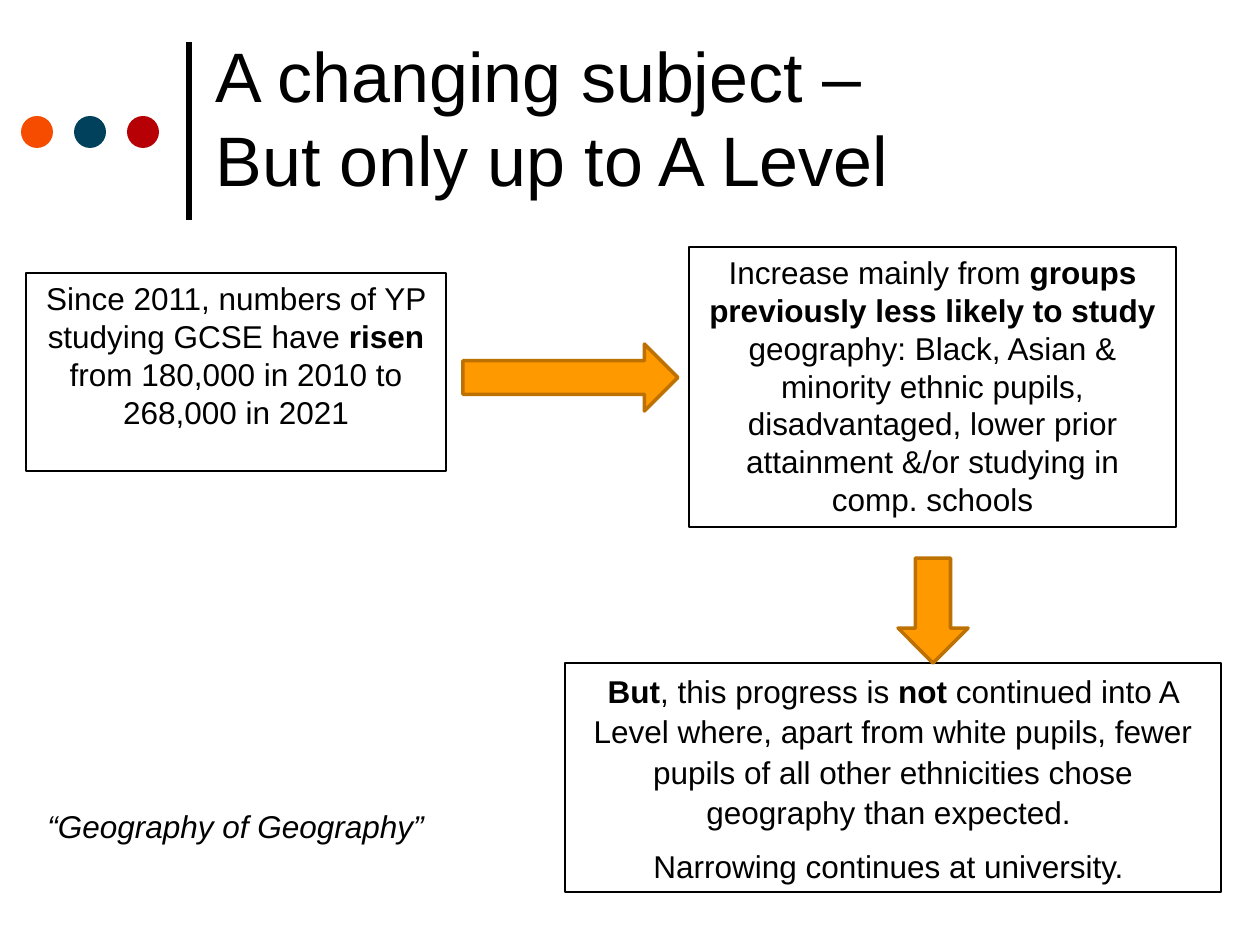
"""Build the slide on how geography is changing as a school subject."""
from typing import NamedTuple

from lxml.etree import SubElement
from pptx import Presentation
from pptx.dml.color import RGBColor
from pptx.enum.shapes import MSO_CONNECTOR, MSO_SHAPE as Shape
from pptx.enum.text import MSO_ANCHOR, PP_ALIGN as Align
from pptx.oxml.ns import qn
from pptx.util import Pt

EMU_PER_PX = 914400 / 126
FONT = "Arial"
BLACK = "000000"


class Box(NamedTuple):
    """A text box; ** in a paragraph switches bold on and off."""
    x: int
    y: int
    w: int
    h: int
    paragraphs: tuple[str, ...]
    spacing: float = 1.0
    after: int = 0
    framed: bool = True


class Mark(NamedTuple):
    """A filled preset shape, outlined when a line colour is given."""
    kind: Shape
    x: int
    y: int
    w: int
    h: int
    fill: str
    line: str = ""


DOTS = [Mark(Shape.OVAL, 21 + 53 * i, 116, 32, 32, fill)
        for i, fill in enumerate(("F54C00", "01415B", "B70005"))]
ARROWS = [
    Mark(Shape.RIGHT_ARROW, 463, 344, 215, 67, "FF9900", "BD7100"),
    Mark(Shape.DOWN_ARROW, 898, 558, 70, 105, "FF9900", "BD7100"),
]
BOXES = [
    Box(26, 273, 420, 198, (
        "Since 2011, numbers of YP studying GCSE have **risen** "
        "from 180,000 in 2010 to 268,000 in 2021",)),
    Box(565, 663, 656, 229, (
        "**But**, this progress is **not** continued into A Level where, apart "
        "from white pupils, fewer pupils of all other ethnicities chose "
        "geography than expected. ",
        "Narrowing continues at university. "), spacing=1.07, after=8),
    Box(689, 247, 487, 280, (
        "Increase mainly from **groups previously less likely to study** "
        "geography: Black, Asian & minority ethnic pupils, disadvantaged, "
        "lower prior attainment &/or studying in comp. schools",)),
]
QUOTE = Box(35, 801, 415, 50, ("“Geography of Geography”",), framed=False)


def px(*lengths: int) -> list[int]:
    """Turn pixel lengths into EMU."""
    return [round(n * EMU_PER_PX) for n in lengths]


def rgb(value: str) -> RGBColor:
    """Turn a hex string into a colour."""
    return RGBColor.from_string(value)


def set_font(font, size: int, bold: bool = False, italic: bool = False) -> None:
    """Apply the slide's typeface to a font."""
    font.name, font.size = FONT, Pt(size)
    font.bold, font.italic = bold, italic
    font.color.rgb = rgb(BLACK)


def set_line(line, colour: str, width: float) -> None:
    """Give an outline its colour and width."""
    line.color.rgb = rgb(colour)
    line.width = Pt(width)


def add_title(s, text: str) -> None:
    """Place and format the title placeholder."""
    sp = s.shapes.title
    sp.left, sp.top, sp.width, sp.height = px(203, 26, 753, 198)
    tf = sp.text_frame
    tf.text = text
    tf.word_wrap = True
    tf.vertical_anchor = MSO_ANCHOR.TOP
    p = tf.paragraphs[0]
    p.alignment = Align.LEFT
    set_font(p.runs[0].font, 40)


def add_rule(s) -> None:
    """Draw the upright rule beside the title."""
    sp = s.shapes.add_connector(MSO_CONNECTOR.STRAIGHT, *px(189, 220, 189, 42))
    set_line(sp.line, BLACK, 3)
    SubElement(sp._element.spPr, qn("a:effectLst"))


def add_mark(s, mark: Mark) -> None:
    """Draw a dot or a block arrow."""
    sp = s.shapes.add_shape(mark.kind, *px(mark.x, mark.y, mark.w, mark.h))
    sp.shadow.inherit = False
    sp.fill.solid()
    sp.fill.fore_color.rgb = rgb(mark.fill)
    if mark.line:
        set_line(sp.line, mark.line, 2)
    else:
        sp.line.fill.background()


def add_box(s, box: Box) -> None:
    """Draw a framed centred text or an unframed italic one."""
    sp = s.shapes.add_textbox(*px(box.x, box.y, box.w, box.h))
    if box.framed:
        set_line(sp.line, BLACK, 0.75)
    tf = sp.text_frame
    tf.word_wrap = box.framed
    for i, text in enumerate(box.paragraphs):
        p = tf.add_paragraph() if i else tf.paragraphs[0]
        p.alignment = Align.CENTER if box.framed else Align.LEFT
        p.line_spacing = box.spacing
        p.space_after = Pt(box.after)
        for j, part in enumerate(text.split("**")):
            if part:
                r = p.add_run()
                r.text = part
                set_font(r.font, 18, bold=j % 2 == 1, italic=not box.framed)


def main() -> None:
    """Build and save the slide."""
    prs = Presentation()
    prs.slide_width, prs.slide_height = px(1260, 945)
    s = prs.slides.add_slide(prs.slide_layouts[5])
    add_rule(s)
    for dot in DOTS:
        add_mark(s, dot)
    add_title(s, "A changing subject – But only up to A Level")
    for box in BOXES:
        add_box(s, box)
    for arrow in ARROWS:
        add_mark(s, arrow)
    add_box(s, QUOTE)
    prs.save("out.pptx")


if __name__ == "__main__":
    main()
